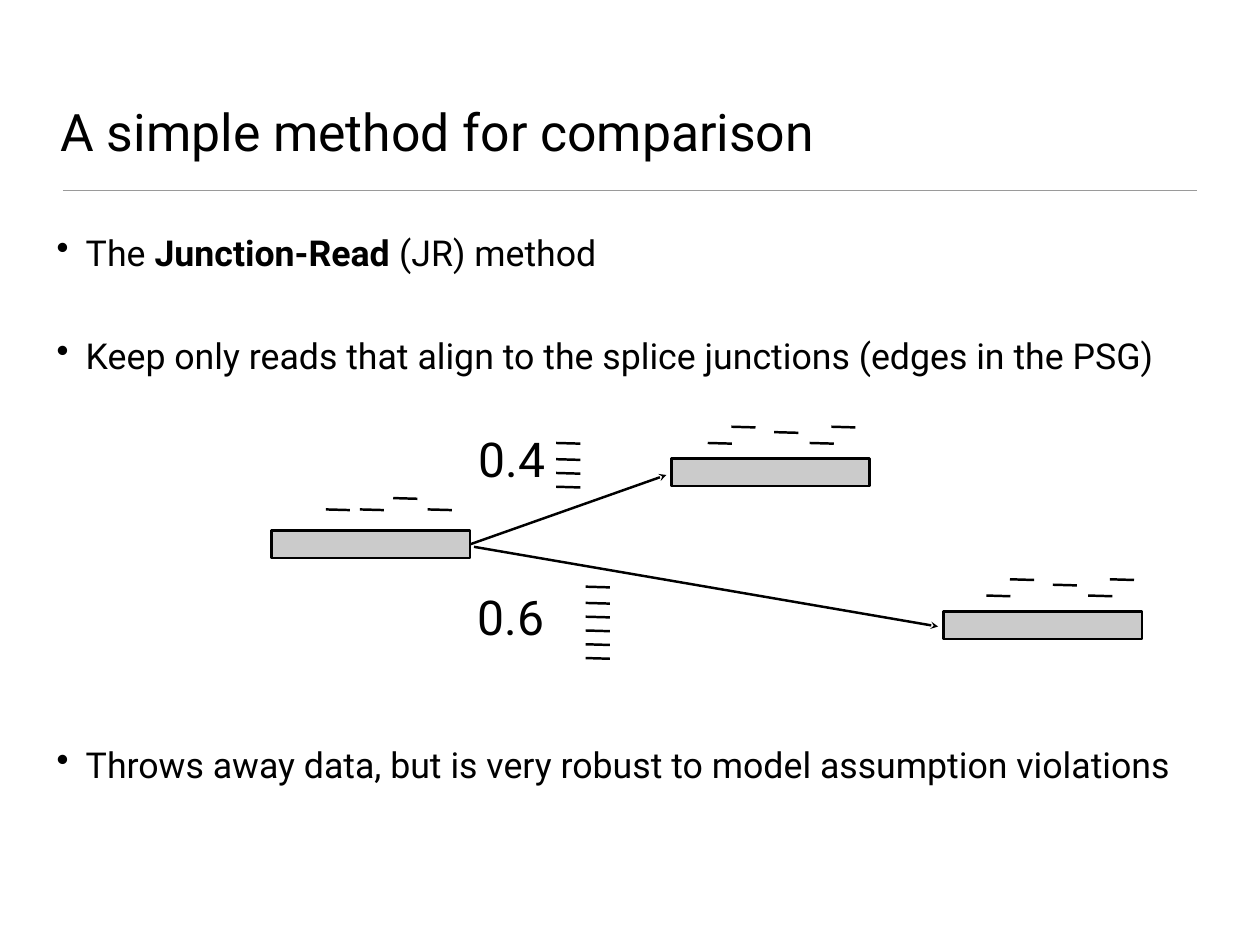
from lxml.etree import SubElement
from pptx import Presentation
from pptx.dml.color import RGBColor
from pptx.enum.shapes import MSO_CONNECTOR as CONN, MSO_SHAPE as SHAPE
from pptx.enum.text import MSO_ANCHOR as ANCHOR, PP_ALIGN as ALIGN
from pptx.oxml.ns import qn
from pptx.util import Inches, Pt

COLS, ROWS = 128, 96
UNIT = Inches(1) / 9
BLACK = RGBColor(0, 0, 0)
EXON_GREY = RGBColor(0xCB, 0xCB, 0xCB)
RULE_GREY = RGBColor(0x9A, 0x9A, 0x9A)
FONT = "Roboto"
EXON_W, EXON_H = 20.15, 2.8
READ_W, READ_DROP = 2.45, 0.07
SOURCE_READS = [(5.5, -2.15), (8.95, -2.15), (12.35, -3.3), (15.85, -2.15)]
TARGET_READS = [(3.7, -1.6), (6.1, -3.25), (10.45, -2.7), (14.05, -1.6), (16.25, -3.25)]
BULLETS = [
    (0, [("The ", False), ("Junction-Read ", True), ("(JR) method", False)]),
    (49, [("Keep only reads that align to the splice junctions (edges in the PSG)", False)]),
    (297.5, [("Throws away data, but is very robust to model assumption violations", False)]),
]


def grid(*units):
    """Turn grid units into slide lengths."""
    return [round(u * UNIT) for u in units]


def add_line(s, x1, y1, x2, y2, color=BLACK, width=2):
    """Draw a straight line between two grid points."""
    line = s.shapes.add_connector(CONN.STRAIGHT, *grid(x1, y1, x2, y2))
    line.line.color.rgb = color
    line.line.width = Pt(width)
    SubElement(line._element.spPr, qn("a:effectLst"))
    return line


def add_arrow(s, x1, y1, x2, y2):
    """Draw a line with a stealth arrowhead at its end."""
    arrow = add_line(s, x1, y1, x2, y2)
    tail = SubElement(arrow.line._get_or_add_ln(), qn("a:tailEnd"))
    tail.set("type", "stealth")
    return arrow


def add_text(s, x, y, w, h, anchor, wrap=True):
    """Add an empty text box and return its text frame."""
    tf = s.shapes.add_textbox(*grid(x, y, w, h)).text_frame
    tf.word_wrap = wrap
    tf.vertical_anchor = anchor
    tf.margin_left = tf.margin_right = tf.margin_top = tf.margin_bottom = Inches(0.06)
    return tf


def style(r, size, bold=False):
    """Format a run in the slide's font."""
    r.font.name = FONT
    r.font.size = Pt(size)
    r.font.bold = bold
    r.font.color.rgb = BLACK


def add_title(s, x, y, w, h):
    """Place the title and the rule below it."""
    p = add_text(s, x, y, w, h, ANCHOR.BOTTOM).paragraphs[0]
    p.text = "A simple method for comparison"
    style(p.runs[0], 42)
    rule_y = y + h + 2.35
    add_line(s, x + 0.8, rule_y, x + w - 0.7, rule_y, RULE_GREY, 1)


def add_bullets(s, x, y, w, h):
    """Place the bullets, leaving room for the diagram before the last."""
    tf = add_text(s, x, y, w, h, ANCHOR.TOP)
    for i, (gap, parts) in enumerate(BULLETS):
        p = tf.add_paragraph() if i else tf.paragraphs[0]
        p.space_before = Pt(gap)
        pPr = p._p.get_or_add_pPr()
        pPr.set("marL", str(Inches(0.33)))
        pPr.set("indent", str(-Inches(0.33)))
        SubElement(pPr, qn("a:buChar")).set("char", "•")
        for text, bold in parts:
            r = p.add_run()
            r.text = text
            style(r, 29, bold)


def add_read(s, x, y):
    """Draw one short read."""
    add_line(s, x, y, x + READ_W, y + READ_DROP)


def add_exon(s, x, y, reads, shift=0):
    """Draw an exon with its reads above it."""
    sp = s.shapes.add_shape(SHAPE.RECTANGLE, *grid(x, y, EXON_W, EXON_H))
    sp.shadow.inherit = False
    sp.fill.solid()
    sp.fill.fore_color.rgb = EXON_GREY
    sp.line.color.rgb = BLACK
    sp.line.width = Pt(2)
    for dx, dy in reads:
        add_read(s, x + dx + shift, y + dy)
    return sp


def add_junction(s, x, y, label, stack_x, stack_y, count):
    """Place a junction's share beside its stack of reads."""
    p = add_text(s, x, y, 7.9, 6.75, ANCHOR.BOTTOM, False).paragraphs[0]
    p.text = label
    p.alignment = ALIGN.CENTER
    style(p.runs[0], 39)
    add_read(s, stack_x, stack_y)
    for i in range(count - 1):
        add_read(s, stack_x, stack_y + 1.65 + 1.4 * i)


def add_diagram(s, x, y):
    """Draw the splice graph from its top left corner."""
    source = add_exon(s, x, y + 10.9, SOURCE_READS)
    add_exon(s, x + 40.6, y + 3.6, TARGET_READS)
    add_exon(s, x + 68.25, y + 19.1, TARGET_READS, 0.65)
    upper = add_arrow(s, x + EXON_W, y + 12.3, x + 40.1, y + 5.25)
    upper.begin_connect(source, 3)
    add_arrow(s, x + 20.55, y + 12.55, x + 67.7, y + 20.65)
    add_junction(s, x + 20.45, y + 0.3, "0.4", x + 28.9, y + 2, 4)
    add_junction(s, x + 20.35, y + 16.3, "0.6", x + 31.9, y + 16.6, 6)


def main():
    """Build and save the slide."""
    prs = Presentation()
    prs.slide_width, prs.slide_height = grid(COLS, ROWS)
    s = prs.slides.add_slide(prs.slide_layouts[6])
    add_title(s, 5.6, 3.25, 116.7, 13.75)
    add_bullets(s, 5.2, 22.9, 116.6, 67.9)
    add_diagram(s, 27.6, 43)
    prs.save("out.pptx")


if __name__ == "__main__":
    main()
